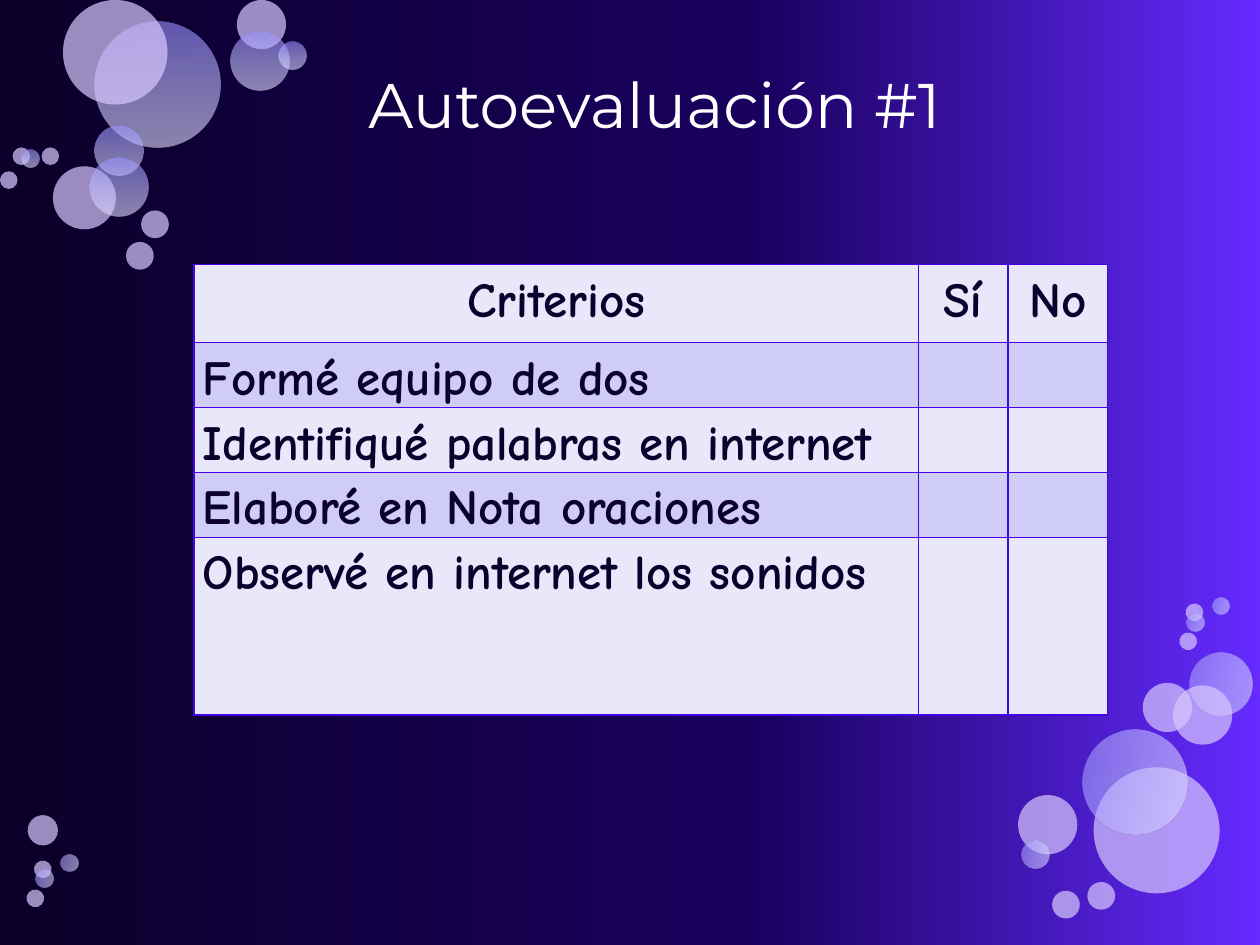
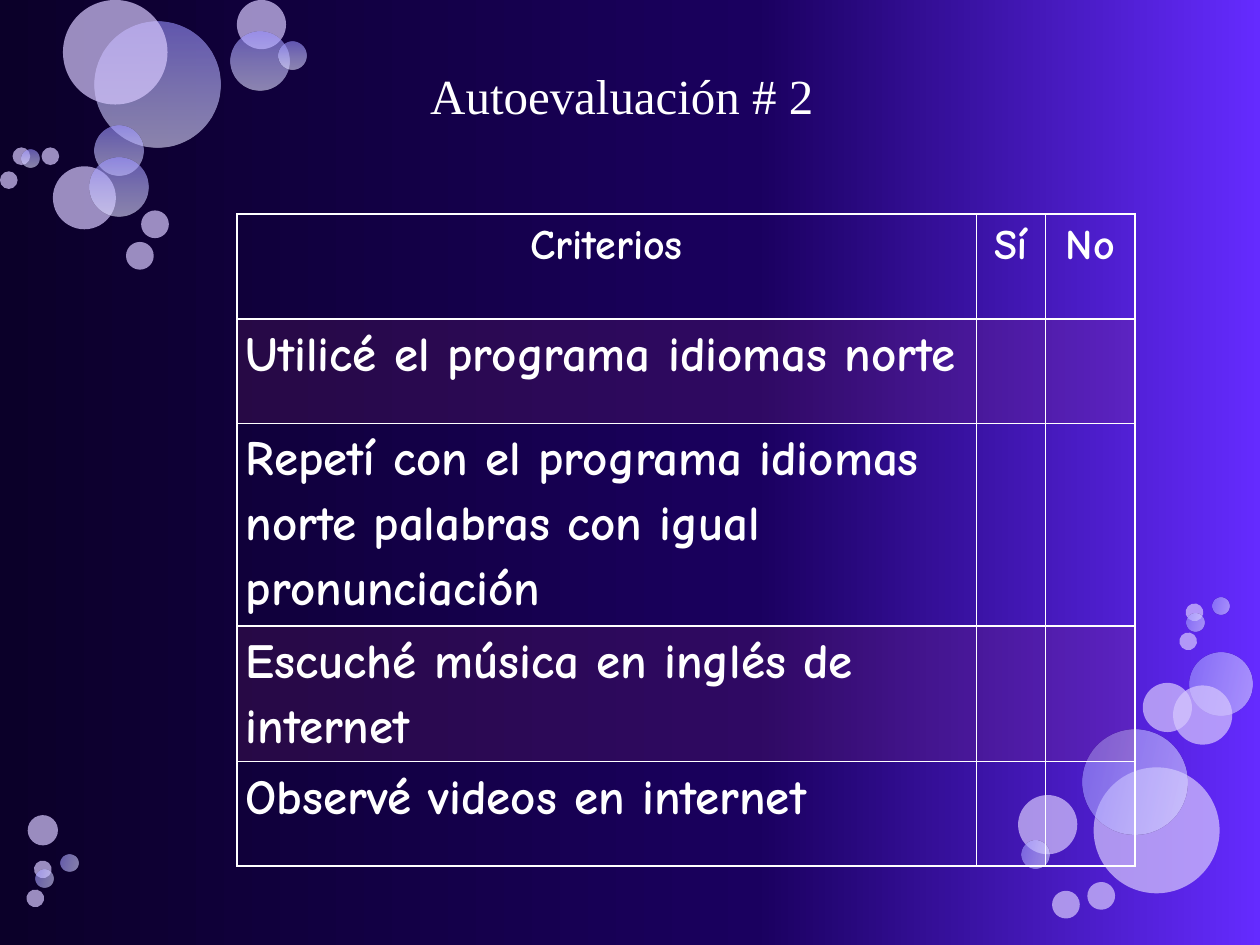
from lxml import etree
from pptx import Presentation
from pptx.dml.color import RGBColor
from pptx.enum.shapes import MSO_SHAPE
from pptx.enum.text import MSO_ANCHOR, PP_ALIGN
from pptx.oxml.ns import qn
from pptx.util import Inches, Pt

ELLIPSE = MSO_SHAPE.OVAL
TOP = MSO_ANCHOR.TOP
CENTER, LEFT = PP_ALIGN.CENTER, PP_ALIGN.LEFT

SLIDE_WIDTH, SLIDE_HEIGHT = 10, 7.5
WHITE, INK, VIOLET = "FFFFFF", "0C002C", "4203E7"
LILAC = "D7C8FE"
BACKGROUND_STOPS = [(0, "0B0029"), (60, "1A005F"), (100, "652BFF")]
BUBBLE_STOPS = [(0, "9890FF"), (50, "BFBBFF"), (100, "E0DEFF")]
PLAIN, SHADED = "plain", "shaded"
TABLE_FONT = "Comic Neue"

BUBBLE_CLUSTERS = [
    {"box": (0, 0), "rotation": 0, "flipped": False, "bubbles": [
        (0.75, 0.17, 1, SHADED), (0.42, 1.32, 0.5, PLAIN),
        (0.75, 1, 0.39, SHADED), (0.71, 1.25, 0.47, SHADED),
        (0.5, 0, 0.83, PLAIN), (1.88, 0, 0.39, PLAIN),
        (1.83, 0.25, 0.47, SHADED), (2.21, 0.33, 0.22, SHADED),
        (1.12, 1.67, 0.22, PLAIN), (0.1, 1.17, 0.14, PLAIN),
        (1, 1.92, 0.22, PLAIN), (0, 1.36, 0.14, PLAIN),
        (0.17, 1.19, 0.14, SHADED), (0.33, 1.17, 0.14, PLAIN)]},
    {"box": (8, 4.7), "rotation": 103.3, "flipped": True, "bubbles": [
        (0.68, 1.39, 1, PLAIN), (1.44, 0.48, 0.5, SHADED),
        (1.07, 0.72, 0.39, PLAIN), (1.31, 0.74, 0.47, PLAIN),
        (0.59, 1.09, 0.83, SHADED), (0.08, 1.61, 0.47, PLAIN),
        (0.11, 1.97, 0.22, SHADED), (0.35, 2.37, 0.22, PLAIN),
        (1.41, 0.09, 0.14, PLAIN), (0.63, 2.3, 0.22, PLAIN),
        (1.62, 0.04, 0.14, SHADED), (1.42, 0.17, 0.14, SHADED),
        (1.36, 0.32, 0.14, PLAIN)]},
    {"box": (0.2, 6.4), "rotation": 103.3, "flipped": True, "bubbles": [
        (0.02, 0.07, 0.24, PLAIN), (0.07, 0.43, 0.14, PLAIN),
        (0.28, 0.38, 0.14, SHADED), (0.08, 0.5, 0.14, SHADED),
        (0.01, 0.66, 0.14, PLAIN)]},
]

EVALUATIONS = [
    {
        "title": {"text": "Autoevaluación #1", "font": "Montserrat", "size": 36,
                  "box": (2.24, 0.47, 5.91, 1.31), "top_inset": 0.05},
        "table": {"box": (1.54, 2.1), "columns": [5.75, 0.71, 0.79],
                  "rows": [0.62] + [0.515] * 3 + [1.41],
                  "header_size": 28, "ink": INK, "border": VIOLET,
                  "bands": [("E9E7FA", 100), ("CFCCF6", 100)]},
        "criteria": ["Formé equipo de dos", "Identifiqué palabras en internet",
                     "Elaboré en Nota oraciones", "Observé en internet los sonidos"],
    },
    {
        "title": {"text": "Autoevaluación # 2", "font": "Times New Roman", "size": 28,
                  "box": (1.88, 0.44, 6.11, 1.35), "top_inset": 0.08},
        "table": {"box": (1.88, 1.7), "columns": [5.87, 0.55, 0.71],
                  "rows": [0.83, 0.83, 1.61, 1.07, 0.83],
                  "header_size": 24, "ink": WHITE, "border": WHITE,
                  "bands": [None, ("842F73", 20)]},
        "criteria": ["Utilicé el programa idiomas norte",
                     "Repetí con el programa idiomas norte palabras con igual pronunciación",
                     "Escuché música en inglés de internet",
                     "Observé videos en internet"],
    },
]


def color(hex_text):
    return RGBColor.from_string(hex_text)


def set_values(target, values):
    for name, value in values.items():
        setattr(target, name, value)


def add_alpha(color_element, percent):
    etree.SubElement(color_element, qn("a:alpha"), val=str(percent * 1000))


def fill_solid(fill, owner, hex_text, alpha=100):
    fill.solid()
    fill.fore_color.rgb = color(hex_text)
    if alpha < 100:
        add_alpha(owner.find(qn("a:solidFill")).find(qn("a:srgbClr")), alpha)


def fill_gradient(fill, owner, stops, angle, alpha=100):
    fill.gradient()
    fill.gradient_angle = angle
    stop_list = next(owner.iter(qn("a:gsLst")))
    for stop in list(stop_list):
        stop_list.remove(stop)
    for position, hex_text in stops:
        stop = etree.SubElement(stop_list, qn("a:gs"), pos=str(position * 1000))
        stop_color = etree.SubElement(stop, qn("a:srgbClr"), val=hex_text)
        if alpha < 100:
            add_alpha(stop_color, alpha)


def write_text(frame, text, font_values, paragraph_values):
    paragraph = frame.paragraphs[0]
    set_values(paragraph, paragraph_values)
    run = paragraph.add_run()
    run.text = text
    run.font.color.rgb = color(font_values["color"])
    set_values(run.font, {name: value for name, value in font_values.items() if name != "color"})


def add_bubbles(slide, box, rotation, flipped, bubbles):
    for left, top, diameter, style in bubbles:
        bubble = slide.shapes.add_shape(
            ELLIPSE, Inches(box[0] + left), Inches(box[1] + top),
            Inches(diameter), Inches(diameter))
        bubble.shadow.inherit = False
        bubble.line.fill.background()
        bubble.rotation = rotation
        properties = bubble._element.spPr
        if flipped:
            properties.find(qn("a:xfrm")).set("flipV", "1")
        if style == SHADED:
            fill_gradient(bubble.fill, properties, BUBBLE_STOPS, 270, 60)
        else:
            fill_solid(bubble.fill, properties, LILAC, 70)


def add_title(slide, text, font, size, box, top_inset):
    frame = slide.shapes.add_textbox(*map(Inches, box)).text_frame
    set_values(frame, {"word_wrap": True, "vertical_anchor": TOP,
                       "margin_top": Inches(top_inset)})
    write_text(frame, text, {"name": font, "size": Pt(size), "color": WHITE},
               {"alignment": CENTER})


def add_borders(cell, hex_text):
    properties = cell._tc.get_or_add_tcPr()
    for index, side in enumerate(("lnL", "lnR", "lnT", "lnB")):
        line = etree.Element(qn("a:" + side), w=str(Pt(1)))
        line_fill = etree.SubElement(line, qn("a:solidFill"))
        etree.SubElement(line_fill, qn("a:srgbClr"), val=hex_text)
        properties.insert(index, line)


def add_criteria_table(slide, criteria, box, columns, rows, header_size, ink, border, bands):
    table = slide.shapes.add_table(
        len(rows), len(columns), Inches(box[0]), Inches(box[1]),
        Inches(sum(columns)), Inches(sum(rows))).table
    set_values(table, {"first_row": False, "horz_banding": False})
    for column, width in zip(table.columns, columns):
        column.width = Inches(width)
    contents = [["Criterios", "Sí", "No"]] + [[text, "", ""] for text in criteria]
    for row_index, (height, texts) in enumerate(zip(rows, contents)):
        table.rows[row_index].height = Inches(height)
        is_header = row_index == 0
        font_values = {"name": TABLE_FONT, "bold": True, "color": ink,
                       "size": Pt(header_size if is_header else 28)}
        paragraph_values = {"alignment": CENTER if is_header else LEFT, "line_spacing": 1.15}
        band = bands[row_index % 2]
        for column_index, text in enumerate(texts):
            cell = table.cell(row_index, column_index)
            set_values(cell, {"margin_left": Inches(0.07), "margin_right": Inches(0.07),
                              "margin_top": 0, "margin_bottom": 0})
            if band:
                fill_solid(cell.fill, cell._tc.get_or_add_tcPr(), *band)
            else:
                cell.fill.background()
            add_borders(cell, border)
            if text:
                write_text(cell.text_frame, text, font_values, paragraph_values)


def add_evaluation_slide(presentation, evaluation):
    slide = presentation.slides.add_slide(presentation.slide_layouts[6])
    fill_gradient(slide.background.fill, slide._element, BACKGROUND_STOPS, 0)
    for cluster in BUBBLE_CLUSTERS:
        add_bubbles(slide, **cluster)
    add_criteria_table(slide, evaluation["criteria"], **evaluation["table"])
    add_title(slide, **evaluation["title"])


def main():
    presentation = Presentation()
    set_values(presentation, {"slide_width": Inches(SLIDE_WIDTH),
                              "slide_height": Inches(SLIDE_HEIGHT)})
    for evaluation in EVALUATIONS:
        add_evaluation_slide(presentation, evaluation)
    presentation.save("out.pptx")


if __name__ == "__main__":
    main()
